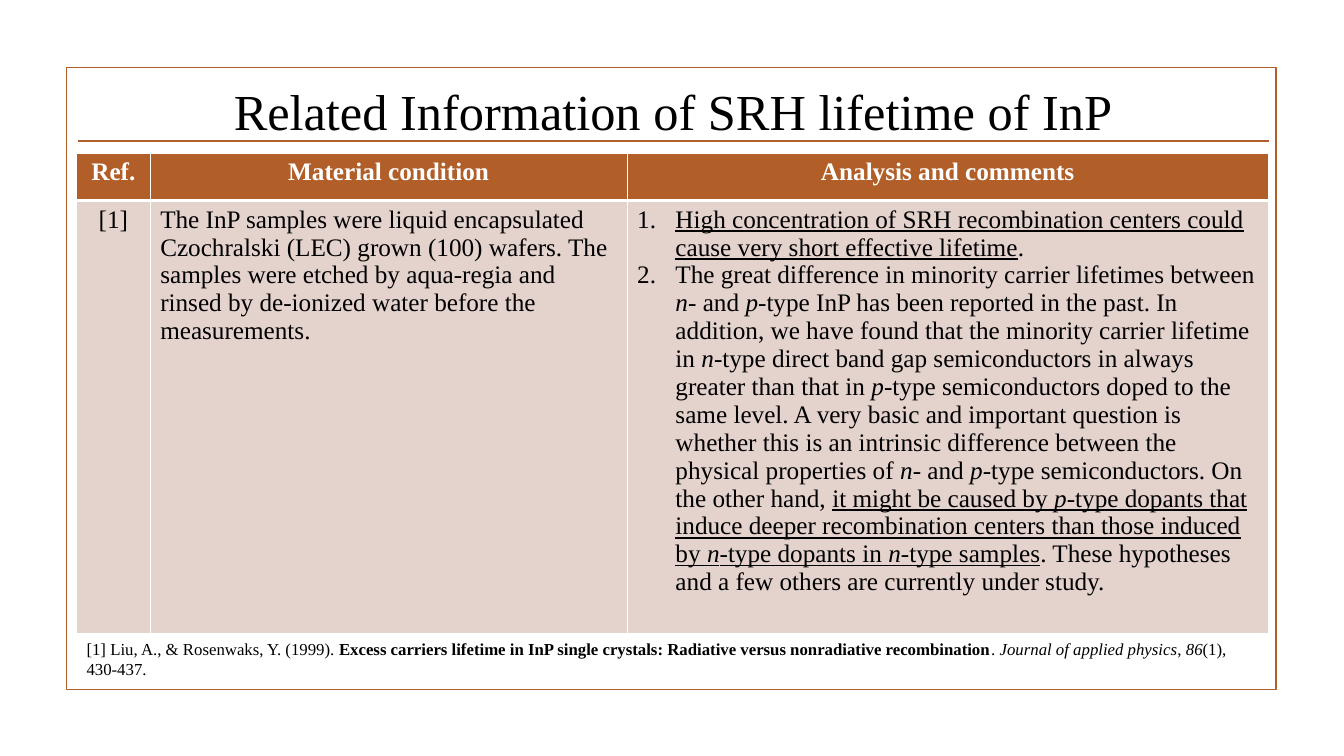
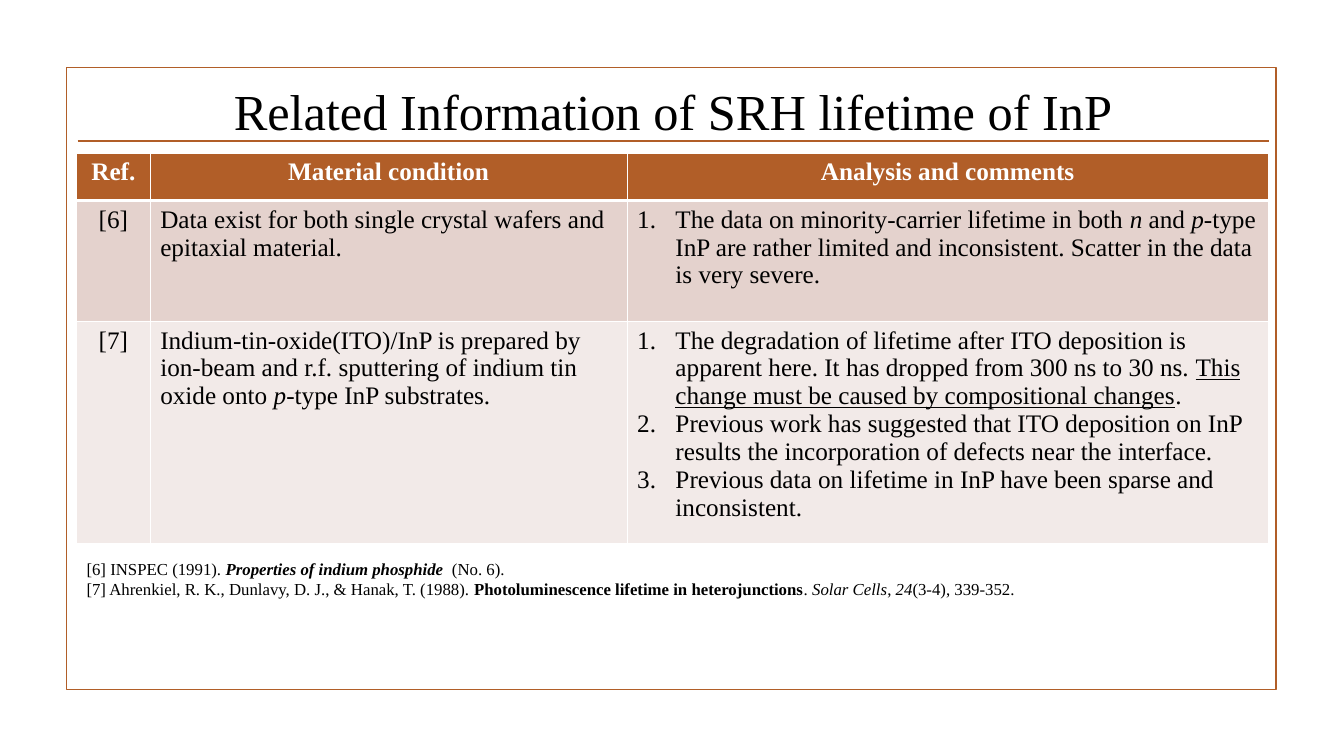
"""Two slides of literature notes on the SRH lifetime of InP."""
from lxml import etree
from pptx import Presentation
from pptx.dml.color import RGBColor
from pptx.enum import shapes, text
from pptx.oxml.ns import qn
from pptx.util import Inches, Pt

FONT = "Times New Roman"
RUST, BLACK, WHITE = "B15E28", "000000", "FFFFFF"
BANDS = ["E4D2CD", "F2EAE8"]
TITLE = "Related Information of SRH lifetime of InP"
HEADS = ["Ref.", "Material condition", "Analysis and comments"]
COLS = [0.73, 4.73, 6.36]
LEFT, TOP, HEAD = 0.76, 1.52, 0.47
MARKS = {"*": "italic", "_": "underline", "^": "bold"}

SLIDES = [
    {
        "rows": [
            (4.3, "[1]",
             "The InP samples were liquid encapsulated Czochralski (LEC) grown (100) wafers. "
             "The samples were etched by aqua-regia and rinsed by de-ionized water before the "
             "measurements.",
             ["_High concentration of SRH recombination centers could cause very short "
              "effective lifetime_.",
              "The great difference in minority carrier lifetimes between *n*- and *p*-type InP "
              "has been reported in the past. In addition, we have found that the minority "
              "carrier lifetime in *n*-type direct band gap semiconductors in always greater "
              "than that in *p*-type semiconductors doped to the same level. A very basic and "
              "important question is whether this is an intrinsic difference between the "
              "physical properties of *n*- and *p*-type semiconductors. On the other hand, "
              "_it might be caused by *p*-type dopants that induce deeper recombination centers "
              "than those induced by *n*-type dopants in *n*-type samples_. These hypotheses "
              "and a few others are currently under study."]),
        ],
        "top": 6.29,
        "refs": [
            "[1] Liu, A., & Rosenwaks, Y. (1999). ^Excess carriers lifetime in InP single "
            "crystals: Radiative versus nonradiative recombination^. *Journal of applied "
            "physics*, *86*(1), 430-437.",
        ],
    },
    {
        "rows": [
            (1.2, "[6]",
             "Data exist for both single crystal wafers and epitaxial material.",
             ["The data on minority-carrier lifetime in both *n* and *p*-type InP are rather "
              "limited and inconsistent. Scatter in the data is very severe."]),
            (2.04, "[7]",
             "Indium-tin-oxide(ITO)/InP is prepared by ion-beam and r.f. sputtering of indium "
             "tin oxide onto *p*-type InP substrates.",
             ["The degradation of lifetime after ITO deposition is apparent here. It has dropped "
              "from 300 ns to 30 ns. _This change must be caused by compositional changes_.",
              "Previous work has suggested that ITO deposition on InP results the incorporation "
              "of defects near the interface.",
              "Previous data on lifetime in InP have been sparse and inconsistent."]),
        ],
        "top": 5.49,
        "refs": [
            "[6] INSPEC (1991). ^*Properties of indium phosphide*^  (No. 6).",
            "[7] Ahrenkiel, R. K., Dunlavy, D. J., & Hanak, T. (1988). ^Photoluminescence "
            "lifetime in heterojunctions^. *Solar Cells*, *24*(3-4), 339-352.",
        ],
    },
]


def rgb(code):
    """Turn a hex string into a colour."""
    return RGBColor.from_string(code)


def split(line):
    """Yield each stretch of marked text with its font values."""
    state, part = dict.fromkeys(MARKS.values(), False), ""
    for char in line:
        if char not in MARKS:
            part += char
            continue
        if part:
            yield part, dict(state)
        state[MARKS[char]] = not state[MARKS[char]]
        part = ""
    if part:
        yield part, state


def write(frame, lines, size, color=BLACK, align=text.PP_ALIGN.LEFT, listed=False):
    """Fill a text frame with marked lines, numbered if listed."""
    for num, line in enumerate(lines):
        para = frame.add_paragraph() if num else frame.paragraphs[0]
        para.alignment = align
        if listed:
            props = para._p.get_or_add_pPr()
            props.set("marL", str(Inches(0.38)))
            props.set("indent", str(-Inches(0.38)))
            etree.SubElement(props, qn("a:buFont"), typeface="+mj-lt")
            etree.SubElement(props, qn("a:buAutoNum"), type="arabicPeriod")
        for words, state in split(line):
            run = para.add_run()
            run.text = words
            for key, val in {"name": FONT, "size": Pt(size), **state}.items():
                setattr(run.font, key, val)
            run.font.color.rgb = rgb(color)


def add_text(slide, box, lines, size, wrap=True):
    """Add a text box that grows with its lines."""
    frame = slide.shapes.add_textbox(*map(Inches, box)).text_frame
    frame.word_wrap = wrap
    frame.auto_size = text.MSO_AUTO_SIZE.SHAPE_TO_FIT_TEXT
    write(frame, lines, size)


def add_frame(slide):
    """Draw the border, the title and the rule below it."""
    border = slide.shapes.add_shape(
        shapes.MSO_SHAPE.RECTANGLE, *map(Inches, (0.66, 0.67, 12, 6.17)))
    border.shadow.inherit = False
    border.fill.background()
    rule = slide.shapes.add_connector(
        shapes.MSO_CONNECTOR.STRAIGHT, *map(Inches, (0.77, 1.4, 12.59, 1.4)))
    etree.SubElement(rule._element.spPr, qn("a:effectLst"))
    for shape, width in ((border, 1.25), (rule, 1.5)):
        shape.line.color.rgb = rgb(RUST)
        shape.line.width = Pt(width)
    add_text(slide, (2.22, 0.75, 8.92, 0.71), [TITLE], 36, wrap=False)


def paint(cell, color, base=1):
    """Give a cell its white borders and its fill."""
    props = cell._tc.get_or_add_tcPr()
    for side, width in {"L": 1, "R": 1, "T": 1, "B": base}.items():
        edge = etree.SubElement(props, qn("a:ln" + side), w=str(Pt(width)))
        fill = etree.SubElement(edge, qn("a:solidFill"))
        etree.SubElement(fill, qn("a:srgbClr"), val=WHITE)
    cell.fill.solid()
    cell.fill.fore_color.rgb = rgb(color)


def add_grid(slide, rows):
    """Add the table with its header and banded rows."""
    highs = [HEAD] + [row[0] for row in rows]
    box = (LEFT, TOP, sum(COLS), sum(highs))
    grid = slide.shapes.add_table(len(highs), len(COLS), *map(Inches, box)).table
    grid.horz_banding = False
    for col, width in zip(grid.columns, COLS):
        col.width = Inches(width)
    for row, high in zip(grid.rows, highs):
        row.height = Inches(high)
    for col, head in enumerate(HEADS):
        cell = grid.cell(0, col)
        paint(cell, RUST, base=3)
        write(cell.text_frame, [f"^{head}^"], 18, WHITE, text.PP_ALIGN.CENTER)
    for num, (_, ref, state, notes) in enumerate(rows):
        for col, lines in enumerate(([ref], [state], notes)):
            cell = grid.cell(num + 1, col)
            paint(cell, BANDS[num % 2])
            align = text.PP_ALIGN.LEFT if col else text.PP_ALIGN.CENTER
            write(cell.text_frame, lines, 18, align=align, listed=col == 2)


def main():
    """Build and save the slides."""
    deck = Presentation()
    deck.slide_width, deck.slide_height = Inches(13.33), Inches(7.5)
    for page in SLIDES:
        slide = deck.slides.add_slide(deck.slide_layouts[6])
        add_frame(slide)
        add_grid(slide, page["rows"])
        high = 0.1 + 0.2 * len(page["refs"])
        add_text(slide, (LEFT, page["top"], sum(COLS), high), page["refs"], 12)
    deck.save("out.pptx")


if __name__ == "__main__":
    main()
